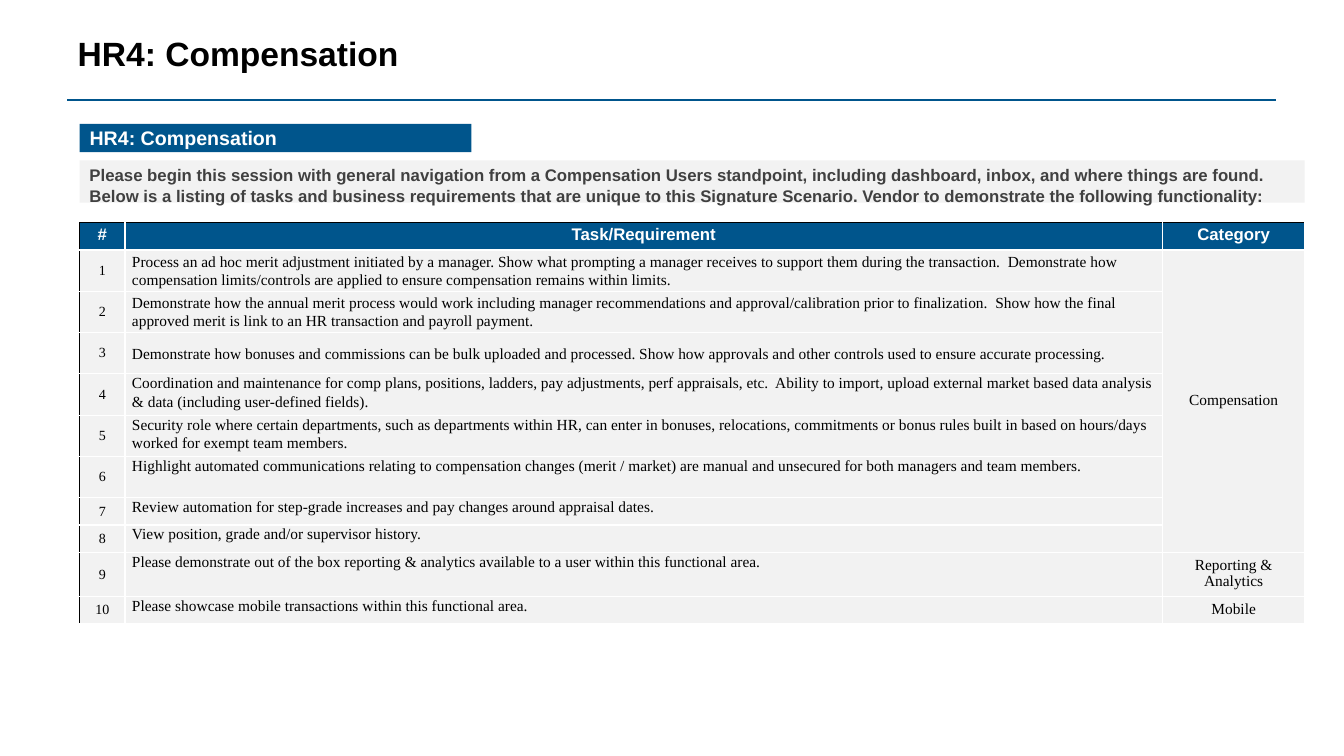
"""Build the HR4 Compensation requirements slide."""
import pptx
import pptx.util
import pptx.dml.color
import pptx.enum.shapes
import pptx.enum.text
import pptx.oxml
import pptx.oxml.ns

HUES = {"blue": "00558C", "pale": "F2F2F2", "gray": "404040", "white": "FFFFFF", "black": "000000"}
TITLE = "HR4: Compensation"
INTRO = [
    "Please begin this session with general navigation from a Compensation Users standpoint, including dashboard, inbox, and where things are found.",
    "Below is a listing of tasks and business requirements that are unique to this Signature Scenario. Vendor to demonstrate the following functionality:",
]
HEADS = ["#", "Task/Requirement", "Category"]
TASKS = [
    "Process an ad hoc merit adjustment initiated by a manager. Show what prompting a manager receives to support them during the transaction.  Demonstrate how compensation limits/controls are applied to ensure compensation remains within limits.",
    "Demonstrate how the annual merit process would work including manager recommendations and approval/calibration prior to finalization.  Show how the final approved merit is link to an HR transaction and payroll payment.",
    "Demonstrate how bonuses and commissions can be bulk uploaded and processed. Show how approvals and other controls used to ensure accurate processing.",
    "Coordination and maintenance for comp plans, positions, ladders, pay adjustments, perf appraisals, etc.  Ability to import, upload external market based data analysis & data (including user-defined fields).",
    "Security role where certain departments, such as departments within HR, can enter in bonuses, relocations, commitments or bonus rules built in based on hours/days worked for exempt team members.",
    "Highlight automated communications relating to compensation changes (merit / market) are manual and unsecured for both managers and team members.",
    "Review automation for step-grade increases and pay changes around appraisal dates.",
    "View position, grade and/or supervisor history.",
    "Please demonstrate out of the box reporting & analytics available to a user within this functional area.",
    "Please showcase mobile transactions within this functional area.",
]
GROUPS = {1: "Compensation", 9: "Reporting & Analytics", 10: "Mobile"}
WIDTHS = [0.45, 10.3, 1.41]
HEIGHTS = [0.27] + [0.41] * 6 + [0.27, 0.27, 0.44, 0.27]
LEFT, WIDE = 0.79, 12.16

Inches, Pt = pptx.util.Inches, pptx.util.Pt
ALIGN, ANCHOR = pptx.enum.text.PP_ALIGN, pptx.enum.text.MSO_ANCHOR


def hue(name):
    return pptx.dml.color.RGBColor.from_string(HUES[name])


def box(*sides):
    return [Inches(side) for side in sides]


def write(para, text, size, color, face="Arial", bold=True):
    run = para.add_run()
    run.text = text
    run.font.size, run.font.name, run.font.bold = Pt(size), face, bold
    run.font.color.rgb = hue(color)


def bar(slide, *sides, color):
    shape = slide.shapes.add_shape(pptx.enum.shapes.MSO_SHAPE.RECTANGLE, *box(*sides))
    shape.shadow.inherit = False
    shape.fill.solid()
    shape.fill.fore_color.rgb = hue(color)
    shape.line.fill.background()
    return shape


def edge(cell, row, col):
    props = cell._tc.get_or_add_tcPr()
    for side in "LRTB":
        dark = (side == "L" and col == 0) or (side == "T" and row == 0)
        color = HUES["black" if dark else "white"]
        props.append(pptx.oxml.parse_xml(
            f'<a:ln{side} {pptx.oxml.ns.nsdecls("a")} w="12700"><a:solidFill>'
            f'<a:srgbClr val="{color}"/></a:solidFill></a:ln{side}>'))


def fill_cell(cell, row, col, text):
    task = row > 0 and col == 1
    edge(cell, row, col)
    cell.fill.solid()
    cell.fill.fore_color.rgb = hue("pale" if row else "blue")
    cell.margin_left = cell.margin_right = Inches(0.07 if task else 0.05)
    cell.margin_top = cell.margin_bottom = Inches(0 if task else 0.05)
    cell.vertical_anchor = ANCHOR.TOP if task and row > 3 else ANCHOR.MIDDLE
    if not text:
        return
    para = cell.text_frame.paragraphs[0]
    para.alignment = ALIGN.LEFT if task else ALIGN.CENTER
    para.line_spacing = 1.07 if task else Pt(11)
    if row:
        write(para, text, 11 if col else 10, "black", "Times New Roman", False)
    else:
        write(para, text, 12, "white")


def add_grid(slide):
    rows = [HEADS] + [[str(num), task, GROUPS.get(num, "")] for num, task in enumerate(TASKS, 1)]
    grid = slide.shapes.add_table(len(rows), len(HEADS), *box(LEFT, 2.21, WIDE, sum(HEIGHTS))).table
    for col, width in enumerate(WIDTHS):
        grid.columns[col].width = Inches(width)
    for row, texts in enumerate(rows):
        grid.rows[row].height = Inches(HEIGHTS[row])
        for col, text in enumerate(texts):
            fill_cell(grid.cell(row, col), row, col, text)
    grid.cell(1, 2).merge(grid.cell(8, 2))


def main():
    deck = pptx.Presentation()
    deck.slide_width, deck.slide_height = box(13.34, 7.5)
    slide = deck.slides.add_slide(deck.slide_layouts[5])

    title = slide.shapes.title
    title.left, title.top, title.width, title.height = box(0.67, 0.32, 12.01, 0.65)
    title.text_frame.vertical_anchor = ANCHOR.TOP
    para = title.text_frame.paragraphs[0]
    para.alignment, para.line_spacing = ALIGN.LEFT, 0.9
    write(para, TITLE, 24, "black")

    rule = slide.shapes.add_connector(pptx.enum.shapes.MSO_CONNECTOR.STRAIGHT, *box(0.67, 0.99, 12.67, 0.99))
    rule.line.color.rgb, rule.line.width = hue("blue"), Pt(1.5)
    rule._element.spPr.append(pptx.oxml.parse_xml(f'<a:effectLst {pptx.oxml.ns.nsdecls("a")}/>'))

    bar(slide, LEFT, 1.59, WIDE, 0.42, color="pale")
    add_grid(slide)

    frame = slide.shapes.add_textbox(*box(LEFT, 1.59, WIDE, 0.5)).text_frame
    frame.word_wrap = True
    for num, text in enumerate(INTRO):
        write(frame.add_paragraph() if num else frame.paragraphs[0], text, 12, "gray")

    label = bar(slide, LEFT, 1.23, 3.89, 0.28, color="blue").text_frame
    label.vertical_anchor = ANCHOR.MIDDLE
    label.paragraphs[0].alignment = ALIGN.LEFT
    write(label.paragraphs[0], TITLE, 14, "white")

    deck.save("out.pptx")


if __name__ == "__main__":
    main()
